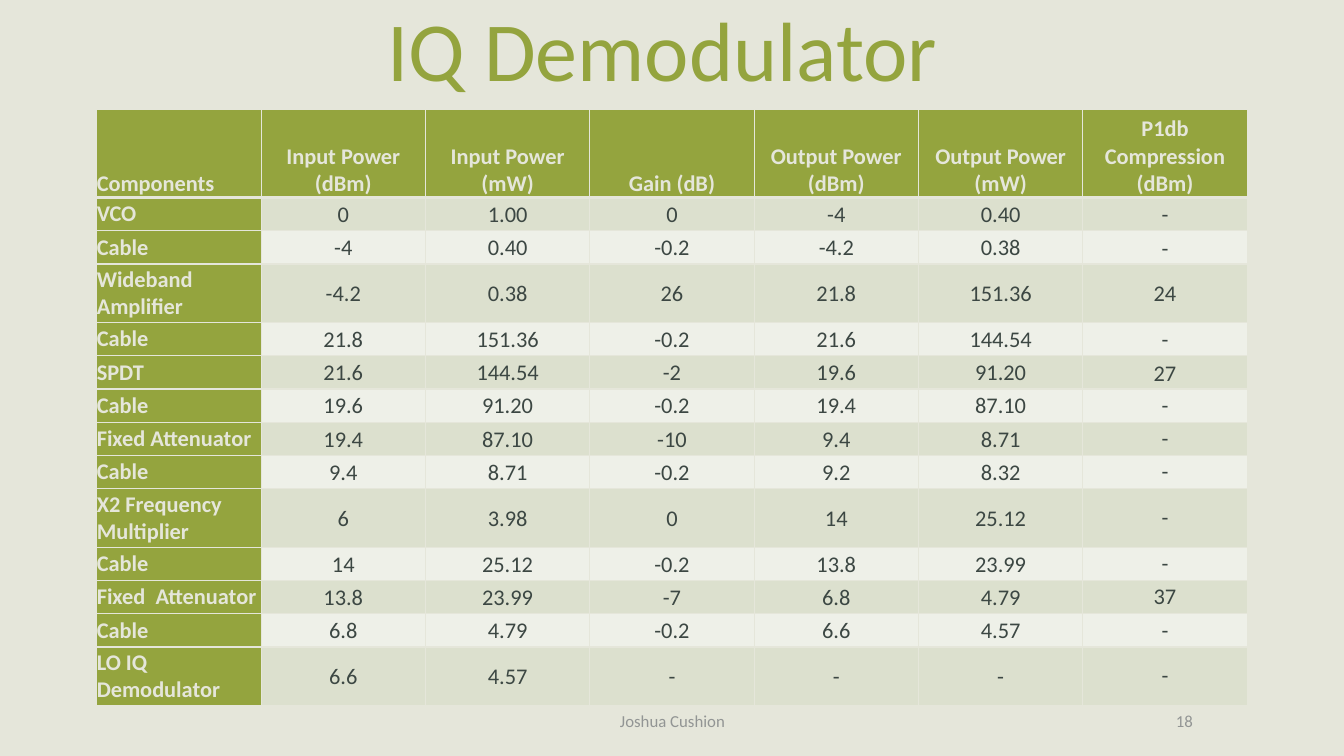
"""Build the IQ Demodulator power budget slide."""
import lxml.etree
import pptx
import pptx.dml.color
import pptx.enum.text
import pptx.oxml.ns
import pptx.util

Inches, Pt = pptx.util.Inches, pptx.util.Pt
RGBColor = pptx.dml.color.RGBColor
ALIGN, ANCHOR = pptx.enum.text.PP_ALIGN, pptx.enum.text.MSO_ANCHOR

CREAM = RGBColor(0xE5, 0xE6, 0xDA)
OLIVE = RGBColor(0x94, 0xA4, 0x3E)
DARK = RGBColor(0x3C, 0x47, 0x43)
GRAY = RGBColor(0x92, 0x95, 0x94)
BANDS = [RGBColor(0xEE, 0xF0, 0xE8), RGBColor(0xDC, 0xE0, 0xCE)]

ROWS = [
    ["Components", "Input Power (dBm)", "Input Power (mW)", "Gain (dB)",
     "Output Power (dBm)", "Output Power (mW)", "P1db Compression (dBm)"],
    ["VCO", "0", "1.00", "0", "-4", "0.40", "-"],
    ["Cable", "-4", "0.40", "-0.2", "-4.2", "0.38", "-"],
    ["Wideband Amplifier", "-4.2", "0.38", "26", "21.8", "151.36", "24"],
    ["Cable", "21.8", "151.36", "-0.2", "21.6", "144.54", "-"],
    ["SPDT", "21.6", "144.54", "-2", "19.6", "91.20", "27"],
    ["Cable", "19.6", "91.20", "-0.2", "19.4", "87.10", "-"],
    ["Fixed Attenuator", "19.4", "87.10", "-10", "9.4", "8.71", "-"],
    ["Cable", "9.4", "8.71", "-0.2", "9.2", "8.32", "-"],
    ["X2 Frequency Multiplier", "6", "3.98", "0", "14", "25.12", "-"],
    ["Cable", "14", "25.12", "-0.2", "13.8", "23.99", "-"],
    ["Fixed  Attenuator", "13.8", "23.99", "-7", "6.8", "4.79", "37"],
    ["Cable", "6.8", "4.79", "-0.2", "6.6", "4.57", "-"],
    ["LO IQ Demodulator", "6.6", "4.57", "-", "-", "-", "-"],
]
TALL_ROWS = {0: 0.87, 3: 0.58, 9: 0.58, 13: 0.58}


def style(para, size, color, align, bold=False):
    para.alignment = align
    para.font.name = "Calibri"
    para.font.size = Pt(size)
    para.font.color.rgb = color
    para.font.bold = bold


def add_borders(cell, widths):
    properties = cell._tc.get_or_add_tcPr()
    for place, (side, width) in enumerate(widths.items()):
        line = lxml.etree.Element(pptx.oxml.ns.qn("a:ln" + side), w=str(Pt(width)))
        fill = lxml.etree.SubElement(line, pptx.oxml.ns.qn("a:solidFill"))
        lxml.etree.SubElement(fill, pptx.oxml.ns.qn("a:srgbClr"), val=str(CREAM))
        properties.insert(place, line)


deck = pptx.Presentation()
deck.slide_width, deck.slide_height = Inches(13.33), Inches(7.5)
page = deck.slides.add_slide(deck.slide_layouts[5])
page.background.fill.solid()
page.background.fill.fore_color.rgb = CREAM

title = page.shapes.title
title.left, title.top = Inches(1.4), Inches(0)
title.width, title.height = Inches(10.53), Inches(1.49)
title.text_frame.text = "IQ Demodulator "
title.text_frame.auto_size = pptx.enum.text.MSO_AUTO_SIZE.NONE
title.text_frame.vertical_anchor = ANCHOR.TOP
title.text_frame.paragraphs[0].line_spacing = 0.95
style(title.text_frame.paragraphs[0], 60, OLIVE, ALIGN.CENTER)

table = page.shapes.add_table(len(ROWS), len(ROWS[0]), Inches(0.96), Inches(1.09),
                              Inches(11.41), Inches(5.88)).table
for column in table.columns:
    column.width = Inches(1.63)

for row, texts in enumerate(ROWS):
    table.rows[row].height = Inches(TALL_ROWS.get(row, 0.33))
    for col, text in enumerate(texts):
        cell = table.cell(row, col)
        heading = row == 0 or col == 0
        cell.text = text
        para = cell.text_frame.paragraphs[0]
        style(para, 16, CREAM if heading else DARK,
              ALIGN.LEFT if col == 0 else ALIGN.CENTER, heading)
        cell.vertical_anchor = ANCHOR.BOTTOM if row == 0 else ANCHOR.MIDDLE
        side_inset, top_inset = 0, 0
        if not heading and col < 6:
            side_inset, top_inset = 0.01, 0.01
        elif col == 6 and 1 <= row <= 5:
            side_inset = 0.08
            para.line_spacing = 1.07
        cell.margin_left = cell.margin_right = Inches(side_inset)
        cell.margin_top, cell.margin_bottom = Inches(top_inset), Inches(0)
        cell.fill.solid()
        cell.fill.fore_color.rgb = OLIVE if heading else BANDS[row % 2]
        add_borders(cell, {"L": 1, "R": 1, "T": 3 if row == 1 else 1,
                           "B": 3 if row == 0 else 1})

for text, left, width, align in [("Joshua Cushion", 3.56, 6.22, ALIGN.CENTER),
                                 ("18", 9.78, 2.15, ALIGN.RIGHT)]:
    box = page.shapes.add_textbox(Inches(left), Inches(6.95), Inches(width), Inches(0.4))
    box.text_frame.word_wrap = True
    box.text_frame.vertical_anchor = ANCHOR.MIDDLE
    box.text_frame.text = text
    style(box.text_frame.paragraphs[0], 12, GRAY, align)

deck.save("out.pptx")
